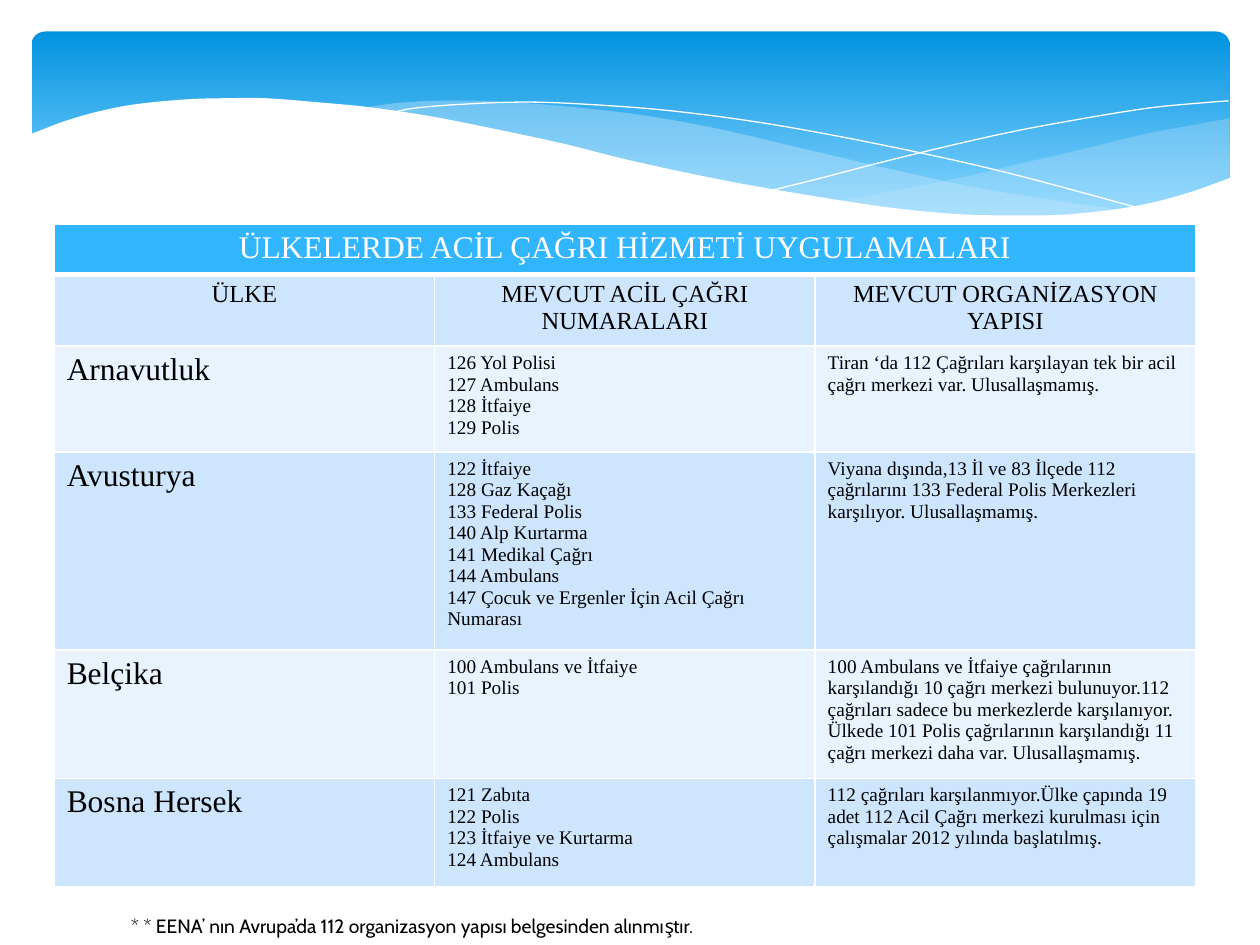
from dataclasses import dataclass
from itertools import chain
from typing import Optional

from lxml.etree import SubElement
from pptx import Presentation
from pptx.dml.color import RGBColor
from pptx.enum.shapes import MSO_SHAPE
from pptx.enum.text import PP_ALIGN
from pptx.oxml.ns import qn
from pptx.util import Inches, Pt

Point = tuple[float, float]


@dataclass(frozen=True)
class Theme:
    """Colours, fonts and type sizes of the slide."""
    white: str = "FFFFFF"
    black: str = "000000"
    sky_top: str = "0293E0"
    sky_bottom: str = "83D3FE"
    wave: str = "C6E7FC"
    header: str = "31B6FD"
    band_dark: str = "CEE5FE"
    band_light: str = "E8F3FF"
    table_font: str = "Times New Roman"
    note_font: str = "Cabin"
    large: int = 18
    medium: int = 14
    small: int = 11


@dataclass(frozen=True)
class Wave:
    """A smooth outline made of one or more curves."""
    curves: tuple[tuple[Point, ...], ...]
    fill: Optional[str] = None
    opacity: int = 100


@dataclass(frozen=True)
class Country:
    """One country row of the table."""
    name: str
    numbers: tuple[str, ...]
    organisation: str
    height: float


THEME = Theme()

WAVES = (
    Wave((
        ((9.76, 0.94), (9.48, 0.99), (9.06, 1.07), (8.61, 1.18), (8.05, 1.31),
         (7.53, 1.43), (7.06, 1.52), (6.61, 1.6)),
        ((6.61, 1.6), (7.05, 1.65), (7.57, 1.7), (8.03, 1.72), (8.44, 1.71),
         (8.81, 1.67), (9.21, 1.6), (9.49, 1.52), (9.76, 1.41)),
    ), THEME.wave, 29),
    Wave((
        ((8.93, 1.67), (8.37, 1.59), (7.75, 1.49), (7.06, 1.34), (6.29, 1.16),
         (5.69, 1.02), (5.14, 0.92), (4.65, 0.86), (4.2, 0.82), (3.8, 0.8),
         (3.44, 0.8), (3.13, 0.82), (2.86, 0.86)),
        ((2.86, 0.86), (3.42, 0.94), (4.04, 1.06), (4.49, 1.16), (5.3, 1.35),
         (6.01, 1.5), (6.65, 1.61), (7.22, 1.68), (7.73, 1.72), (8.18, 1.73),
         (8.57, 1.71), (8.93, 1.67)),
    ), THEME.wave, 40),
    Wave((
        ((3.09, 0.9), (3.28, 0.86), (3.63, 0.83), (4.16, 0.81), (4.69, 0.83),
         (5.33, 0.88), (6.08, 0.98), (6.95, 1.14), (7.95, 1.36), (9.07, 1.66)),
    )),
    Wave((
        ((6.13, 1.51), (6.53, 1.41), (6.95, 1.3), (7.48, 1.17), (8.06, 1.04),
         (8.66, 0.93), (9.1, 0.86), (9.38, 0.83), (9.75, 0.8)),
    )),
    Wave((
        ((9.77, 1.41), (9.4, 1.54), (8.99, 1.64), (8.5, 1.7), (8.09, 1.71),
         (7.61, 1.7), (7.08, 1.65), (6.48, 1.56), (5.79, 1.44), (5.03, 1.28),
         (4.47, 1.14), (3.91, 1.02), (3.4, 0.92), (2.92, 0.85), (2.5, 0.81),
         (2.11, 0.78), (1.77, 0.78), (1.46, 0.79), (1.06, 0.83), (0.76, 0.89),
         (0.52, 0.96), (0.36, 1.02), (0.23, 1.07)),
        ((0.23, 2.24), (9.77, 2.24)),
    ), THEME.white),
)

TITLE = "ÜLKELERDE ACİL ÇAĞRI HİZMETİ UYGULAMALARI"
HEADINGS = ("ÜLKE", "MEVCUT ACİL ÇAĞRI NUMARALARI", "MEVCUT ORGANİZASYON YAPISI")
HEADING_HEIGHTS = (0.39, 0.56)
COLUMN_WIDTH = 3.02
COUNTRIES = (
    Country("Arnavutluk",
            ("126 Yol Polisi", "127 Ambulans", "128 İtfaiye", "129 Polis"),
            "Tiran ‘da 112 Çağrıları karşılayan tek bir acil çağrı merkezi var. "
            "Ulusallaşmamış.", 0.84),
    Country("Avusturya",
            ("122 İtfaiye", "128 Gaz Kaçağı", "133 Federal Polis", "140 Alp Kurtarma",
             "141 Medikal Çağrı", "144 Ambulans",
             "147 Çocuk ve Ergenler İçin Acil Çağrı Numarası"),
            "Viyana dışında,13 İl ve 83 İlçede 112 çağrılarını 133 Federal Polis "
            "Merkezleri karşılıyor. Ulusallaşmamış.", 1.57),
    Country("Belçika",
            ("100 Ambulans ve İtfaiye", "101 Polis"),
            "100 Ambulans ve İtfaiye çağrılarının karşılandığı 10 çağrı merkezi "
            "bulunuyor.112 çağrıları sadece bu merkezlerde karşılanıyor. Ülkede 101 "
            "Polis çağrılarının karşılandığı 11 çağrı merkezi daha var. "
            "Ulusallaşmamış.", 1.02),
    Country("Bosna Hersek",
            ("121 Zabıta", "122 Polis", "123 İtfaiye ve Kurtarma", "124 Ambulans"),
            "112 çağrıları karşılanmıyor.Ülke çapında 19 adet 112 Acil Çağrı merkezi "
            "kurulması için çalışmalar 2012 yılında başlatılmış.", 0.86),
)
NOTE = "* * EENA’ nın Avrupa’da 112 organizasyon yapısı belgesinden alınmıştır."


def smooth(knots: tuple[Point, ...], steps: int = 5) -> list[Point]:
    """Return points of a Catmull-Rom curve through the knots."""
    padded = (knots[0], *knots, knots[-1])
    points = [knots[0]]
    for before, start, end, after in zip(padded, padded[1:], padded[2:], padded[3:]):
        for step in range(1, steps + 1):
            t = step / steps
            points.append(tuple(
                b + t * (c - a + t * (2 * a - 5 * b + 4 * c - d
                                      + t * (3 * (b - c) + d - a))) / 2
                for a, b, c, d in zip(before, start, end, after)))
    return points


def draw_sky(page) -> None:
    """Draw the rounded gradient panel."""
    sky = page.shapes.add_shape(MSO_SHAPE.ROUNDED_RECTANGLE, Inches(0.25), Inches(0.25),
                                Inches(9.51), Inches(1.56))
    sky.adjustments[0] = 0.07
    sky.shadow.inherit = False
    sky.line.fill.background()
    sky.fill.gradient()
    sky.fill.gradient_angle = 270
    stops = ((0, THEME.sky_top), (0.9, THEME.sky_bottom))
    for stop, (position, colour) in zip(sky.fill.gradient_stops, stops):
        stop.position = position
        stop.color.rgb = RGBColor.from_string(colour)


def draw_wave(page, wave: Wave) -> None:
    """Draw a filled wave, or a white hairline when it has no fill."""
    points = [(Inches(x), Inches(y))
              for x, y in chain.from_iterable(map(smooth, wave.curves))]
    builder = page.shapes.build_freeform(*points[0])
    builder.add_line_segments(points[1:], close=wave.fill is not None)
    shape = builder.convert_to_shape()
    shape.shadow.inherit = False
    if wave.fill is None:
        shape.fill.background()
        shape.line.color.rgb = RGBColor.from_string(THEME.white)
        shape.line.width = Pt(0)
        return
    shape.line.fill.background()
    shape.fill.solid()
    shape.fill.fore_color.rgb = RGBColor.from_string(wave.fill)
    if wave.opacity < 100:
        colour = shape._element.spPr.find(f"{qn('a:solidFill')}/{qn('a:srgbClr')}")
        SubElement(colour, qn("a:alpha"), val=str(wave.opacity * 1000))


def set_text(frame, text: str, font: str, size: int, colour: str,
             align: PP_ALIGN = PP_ALIGN.LEFT) -> None:
    """Fill a text frame and format every run in it."""
    frame.text = text
    for paragraph in frame.paragraphs:
        paragraph.alignment = align
        for span in paragraph.runs:
            span.font.name = font
            span.font.size = Pt(size)
            span.font.bold = False
            span.font.color.rgb = RGBColor.from_string(colour)


def style_cell(cell, fill: str, bottom: int = 1) -> None:
    """Give a cell white borders and a solid fill."""
    properties = cell._tc.get_or_add_tcPr()
    for side, width in (("L", 1), ("R", 1), ("T", 1), ("B", bottom)):
        line = SubElement(properties, qn(f"a:ln{side}"), w=str(Pt(width)))
        SubElement(SubElement(line, qn("a:solidFill")), qn("a:srgbClr"), val=THEME.white)
    cell.fill.solid()
    cell.fill.fore_color.rgb = RGBColor.from_string(fill)


def draw_table(page) -> None:
    """Draw the table of countries, numbers and organisations."""
    heights = (*HEADING_HEIGHTS, *(country.height for country in COUNTRIES))
    table = page.shapes.add_table(len(heights), len(HEADINGS), Inches(0.43), Inches(1.78),
                                  Inches(COLUMN_WIDTH * len(HEADINGS)),
                                  Inches(sum(heights))).table
    table.first_row = False
    for column in table.columns:
        column.width = Inches(COLUMN_WIDTH)
    for index, (row, height) in enumerate(zip(table.rows, heights)):
        row.height = Inches(height)
        band = THEME.band_dark if index % 2 else THEME.band_light
        for cell in row.cells:
            style_cell(cell, band if index else THEME.header, 1 if index else 3)
    table.cell(0, 0).merge(table.cell(0, len(HEADINGS) - 1))
    set_text(table.cell(0, 0).text_frame, TITLE, THEME.table_font, THEME.large,
             THEME.white, PP_ALIGN.CENTER)
    for column, heading in enumerate(HEADINGS):
        set_text(table.cell(1, column).text_frame, heading, THEME.table_font,
                 THEME.medium, THEME.black, PP_ALIGN.CENTER)
    sizes = (THEME.large, THEME.small, THEME.small)
    for index, country in enumerate(COUNTRIES, start=len(HEADING_HEIGHTS)):
        texts = (country.name, "\n".join(country.numbers), country.organisation)
        for column, (text, size) in enumerate(zip(texts, sizes)):
            set_text(table.cell(index, column).text_frame, text, THEME.table_font,
                     size, THEME.black)


def main() -> None:
    """Build the slide and save the deck."""
    deck = Presentation()
    deck.slide_width, deck.slide_height = Inches(10), Inches(7.5)
    page = deck.slides.add_slide(deck.slide_layouts[6])
    draw_sky(page)
    for wave in WAVES:
        draw_wave(page, wave)
    note = page.shapes.add_textbox(Inches(0.94), Inches(7.21), Inches(4.8), Inches(0.47))
    note.text_frame.word_wrap = True
    set_text(note.text_frame, NOTE, THEME.note_font, THEME.small, THEME.black)
    draw_table(page)
    deck.save("out.pptx")


if __name__ == "__main__":
    main()
